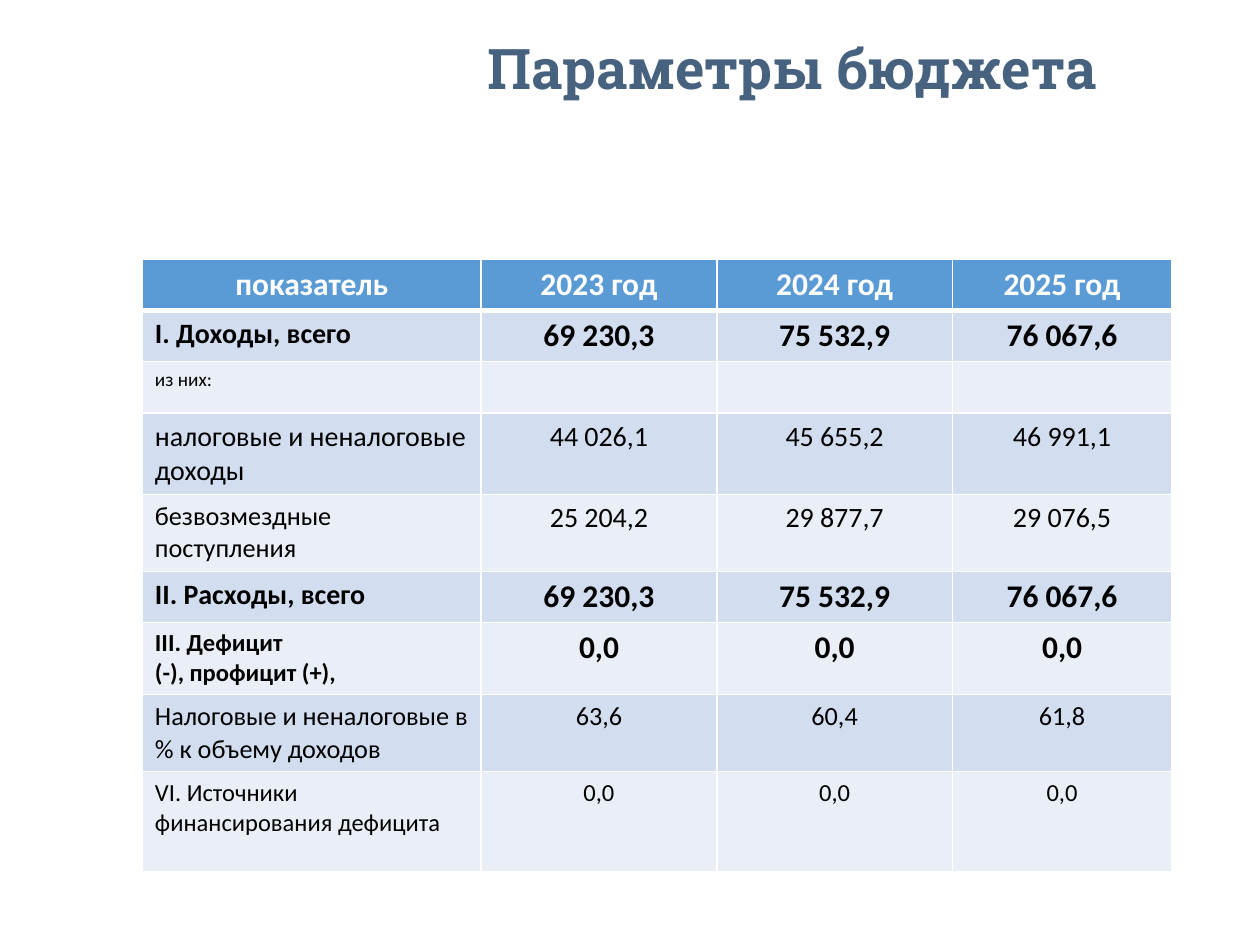
from lxml.etree import SubElement
from pptx import Presentation
from pptx.dml.color import RGBColor
from pptx.enum.text import MSO_ANCHOR, PP_ALIGN
from pptx.oxml.ns import qn
from pptx.util import Cm, Pt

HEADER_FILL = "5B9BD5"
BAND_FILLS = ("EAEFF7", "D2DEEF")
COLUMN_WIDTHS = (6.83, 4.75, 4.75, 4.42)
HEADINGS = ("показатель", "2023 год", "2024 год", "2025 год")

# Label, values, label size, value size, label bold, value bold, row height in cm
ROWS = (
    ("I. Доходы, всего", ("69 230,3", "75 532,9", "76 067,6"), 16, 18, True, True, 1.03),
    ("из них:", ("", "", ""), 11, 18, False, False, 1.04),
    ("налоговые и неналоговые доходы", ("44 026,1", "45 655,2", "46 991,1"),
     16, 16, False, False, 1.63),
    ("безвозмездные поступления", ("25 204,2", "29 877,7", "29 076,5"),
     15, 16, False, False, 1.55),
    ("II. Расходы, всего", ("69 230,3", "75 532,9", "76 067,6"), 16, 18, True, True, 1.03),
    ("III. Дефицит\n(-), профицит (+),", ("0,0", "0,0", "0,0"), 14, 18, True, True, 1.45),
    ("Налоговые и неналоговые в % к объему доходов", ("63,6", "60,4", "61,8"),
     15, 15, False, False, 1.55),
    ("VI. Источники финансирования дефицита", ("0,0", "0,0", "0,0"),
     14, 14, False, False, 2.03),
)


def color(value):
    return RGBColor.from_string(value)


def write(frame, text, size=18, bold=False, ink="000000", font="Calibri",
          align=PP_ALIGN.LEFT, line_spacing=1.0):
    for index, line in enumerate(text.split("\n")):
        para = frame.add_paragraph() if index else frame.paragraphs[0]
        para.alignment = align
        para.line_spacing = line_spacing
        if line:
            span = para.add_run()
            span.text = line
            span.font.size = Pt(size)
            span.font.bold = bold
            span.font.name = font
            span.font.color.rgb = color(ink)


def set_borders(cell, bottom_width):
    properties = cell._tc.get_or_add_tcPr()
    widths = {"a:lnL": 1, "a:lnR": 1, "a:lnT": 1, "a:lnB": bottom_width}
    for position, (tag, width) in enumerate(widths.items()):
        border = SubElement(properties, qn(tag), w=str(Pt(width)))
        fill = SubElement(border, qn("a:solidFill"))
        SubElement(fill, qn("a:srgbClr"), val="FFFFFF")
        properties.insert(position, border)


class BudgetSlide:
    title_style = dict(size=32, bold=True, ink="47627F", font="Roboto Slab",
                       line_spacing=0.9)
    header_style = dict(size=18, bold=True, ink="FFFFFF", align=PP_ALIGN.CENTER)

    def __init__(self, deck):
        self.page = deck.slides.add_slide(deck.slide_layouts[5])

    def title(self, text, left, top, width, height):
        box = self.page.shapes.title
        box.left, box.top, box.width, box.height = map(Cm, (left, top, width, height))
        box.text_frame.word_wrap = True
        box.text_frame.vertical_anchor = MSO_ANCHOR.MIDDLE
        write(box.text_frame, text, **self.title_style)

    def cell(self, cell, text, fill, bottom_width=1, **style):
        cell.fill.solid()
        cell.fill.fore_color.rgb = color(fill)
        set_borders(cell, bottom_width)
        write(cell.text_frame, text, **style)

    def table(self, left, top):
        heights = [1.03] + [row[-1] for row in ROWS]
        frame = self.page.shapes.add_table(
            len(heights), len(COLUMN_WIDTHS), Cm(left), Cm(top),
            Cm(sum(COLUMN_WIDTHS)), Cm(sum(heights)))
        table = frame.table
        for column, width in zip(table.columns, COLUMN_WIDTHS):
            column.width = Cm(width)
        for row, height in zip(table.rows, heights):
            row.height = Cm(height)

        # Header row
        for column, heading in enumerate(HEADINGS):
            self.cell(table.cell(0, column), heading, HEADER_FILL, 3, **self.header_style)

        # Banded body rows
        for number, row in enumerate(ROWS, start=1):
            label, values, label_size, value_size, label_bold, value_bold, _ = row
            fill = BAND_FILLS[number % 2]
            self.cell(table.cell(number, 0), label, fill, size=label_size, bold=label_bold)
            for column, value in enumerate(values, start=1):
                self.cell(table.cell(number, column), value, fill, size=value_size,
                          bold=value_bold, align=PP_ALIGN.CENTER)


def main():
    deck = Presentation()
    deck.slide_width, deck.slide_height = Cm(25.4), Cm(19.05)
    slide = BudgetSlide(deck)
    slide.title("Параметры бюджета", 9.58, 0.2, 15.19, 2.49)
    slide.table(2.87, 5.23)
    deck.save("out.pptx")


if __name__ == "__main__":
    main()
